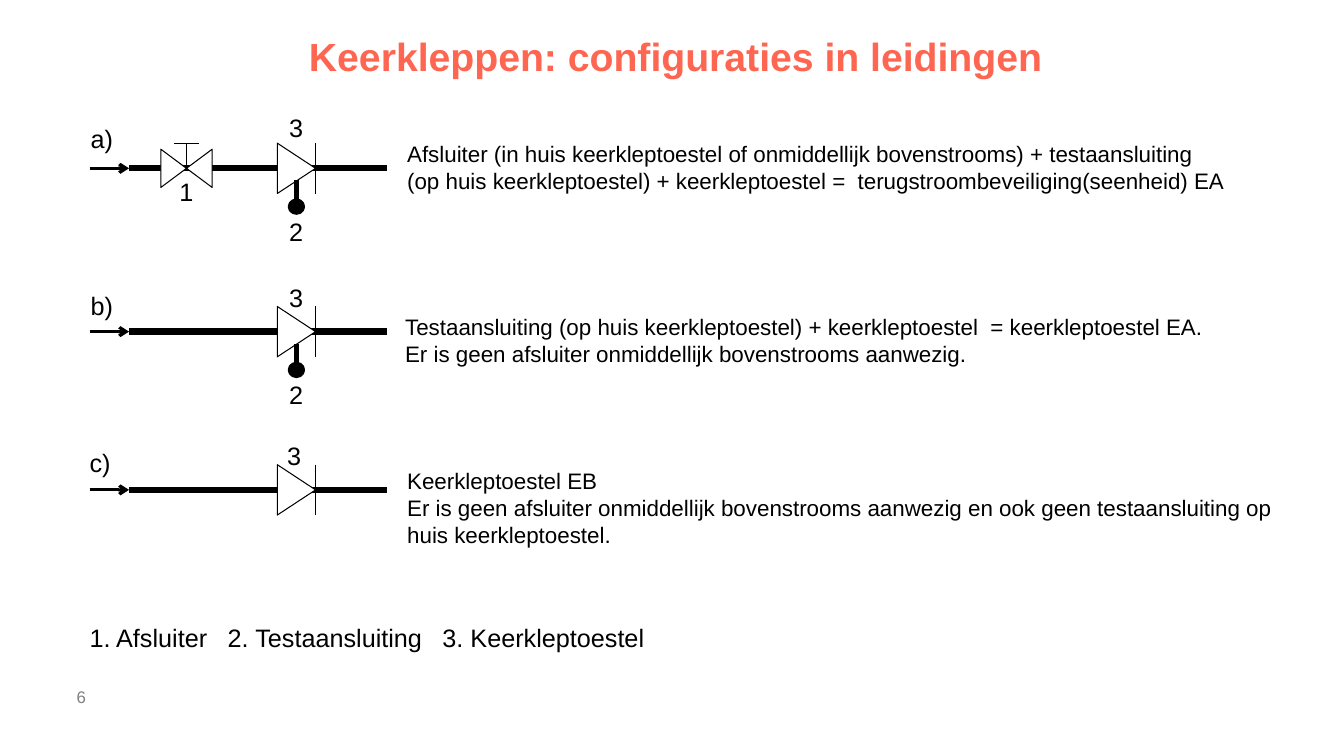
from lxml import etree
from pptx import Presentation
from pptx import util as u
from pptx.dml.color import RGBColor
from pptx.enum import shapes, text
from pptx.oxml.ns import qn

BLACK = RGBColor(0, 0, 0)
WHITE = RGBColor(255, 255, 255)
GRAY = RGBColor(0x80, 0x80, 0x80)
CORAL = RGBColor(0xFF, 0x66, 0x51)

TITLE = "Keerkleppen: configuraties in leidingen"
PAGE = "6"
LEGEND = ["1. Afsluiter", "2. Testaansluiting", "3. Keerkleptoestel"]
STOPS = [1.37, 3.5]

# Per row: pipe height, stop valve, test port, tag (left, top),
# number labels (text, left, top), note (left, top), note lines
ROWS = [
    (1.67, True, True, ("a)", 0.8, 1.17),
     [("1", 1.68, 1.7), ("2", 2.77, 2.1), ("3", 2.77, 1.07)], (3.94, 1.34),
     ["Afsluiter (in huis keerkleptoestel of onmiddellijk bovenstrooms) + testaansluiting",
      "(op huis keerkleptoestel) + keerkleptoestel =  terugstroombeveiliging(seenheid) EA"]),
    (3.29, False, True, ("b)", 0.8, 2.83),
     [("2", 2.77, 3.71), ("3", 2.77, 2.75)], (3.92, 3.06),
     ["Testaansluiting (op huis keerkleptoestel) + keerkleptoestel  = keerkleptoestel EA.",
      "Er is geen afsluiter onmiddellijk bovenstrooms aanwezig."]),
    (4.86, False, False, ("c)", 0.79, 4.39),
     [("3", 2.75, 4.32)], (3.94, 4.59),
     ["Keerkleptoestel EB",
      "Er is geen afsluiter onmiddellijk bovenstrooms aanwezig en ook geen "
      "testaansluiting op huis keerkleptoestel."]),
]

START, INLET, END = 0.89, 1.28, 3.84
STOP_X, PORT_X, CHECK_X, SEAT_X = 1.85, 2.94, 2.94, 3.13
HALF = 0.25

prs = Presentation()
prs.slide_width, prs.slide_height = u.Inches(13.33), u.Inches(7.5)
slide = prs.slides.add_slide(prs.slide_layouts[6])


def write(lines, x, y, w, h, size=18, wrap=False, inset=True, align=None,
          stops=(), space=None, **look):
    box = slide.shapes.add_textbox(*map(u.Inches, (x, y, w, h)))
    frame = box.text_frame
    frame.word_wrap = wrap
    if not inset:
        frame.vertical_anchor = text.MSO_ANCHOR.MIDDLE
        for side in ("left", "top", "right", "bottom"):
            setattr(frame, "margin_" + side, 0)
    for i, line in enumerate(lines):
        para = frame.paragraphs[0] if i == 0 else frame.add_paragraph()
        if stops:
            tabs = etree.SubElement(para._p.get_or_add_pPr(), qn("a:tabLst"))
            for stop in stops:
                etree.SubElement(tabs, qn("a:tab"), pos=str(u.Inches(stop)), algn="l")
        para.alignment, para.line_spacing = align, space
        run = para.add_run()
        run.text = line
        font = {"name": "Arial", "size": u.Pt(size), "bold": False} | look
        run.font.color.rgb = font.pop("color", BLACK)
        for key, value in font.items():
            setattr(run.font, key, value)


def rule(x1, y1, x2, y2, width=0.75, arrow=False):
    line = slide.shapes.add_connector(
        shapes.MSO_CONNECTOR.STRAIGHT, *map(u.Inches, (x1, y1, x2, y2)))
    line.line.color.rgb, line.line.width = BLACK, u.Pt(width)
    if arrow:
        etree.SubElement(line.line._get_or_add_ln(), qn("a:tailEnd"), type="arrow")
    etree.SubElement(line._element.spPr, qn("a:effectLst"))


def symbol(kind, cx, cy, w, h, fill=WHITE, width=0.75, turn=0):
    """Draw a preset shape centred on (cx, cy)."""
    part = slide.shapes.add_shape(
        kind, *map(u.Inches, (cx - w / 2, cy - h / 2, w, h)))
    part.rotation = turn
    part.shadow.inherit = False
    part.fill.solid()
    part.fill.fore_color.rgb = fill
    part.line.color.rgb, part.line.width = BLACK, u.Pt(width)


def draw(y, valve, port):
    """Draw one pipe with its fittings."""
    kind = shapes.MSO_SHAPE
    rule(INLET, y, END, y, 4.5)
    symbol(kind.FLOWCHART_MERGE, CHECK_X, y, 2 * HALF, 0.38, turn=270)
    rule(SEAT_X, y - HALF, SEAT_X, y + HALF)
    if valve:
        symbol(kind.FLOWCHART_COLLATE, STOP_X, y, 0.38, 0.51, turn=270)
        rule(STOP_X, y, STOP_X, y - HALF)
        rule(STOP_X - HALF / 2, y - HALF, STOP_X + HALF / 2, y - HALF)
    if port:
        rule(PORT_X, y + 0.12, PORT_X, y + 0.38, 3)
        symbol(kind.OVAL, PORT_X, y + 0.38, 0.13, 0.12, BLACK, 3)
    rule(START, y, INLET, y, 2.25, arrow=True)


write([TITLE], 0.81, 0.31, 11.78, 0.54, 28, True, False,
      text.PP_ALIGN.CENTER, space=0.9, bold=True, color=CORAL)
for y, valve, port, tag, marks, (x, top), note in ROWS:
    draw(y, valve, port)
    write(note, x, top, 8.87, 0.64, 16, wrap=True)
    for label, left, high in [tag, *marks]:
        write([label], left, high, 0.43 if label == tag[0] else 0.34, 0.4)
write(["\t".join(LEGEND)], 0.79, 6.12, 5.91, 0.4, wrap=True, stops=STOPS)
write([PAGE], 0.76, 6.71, 0.71, 0.4, 12, True, False, color=GRAY)
prs.save("out.pptx")
